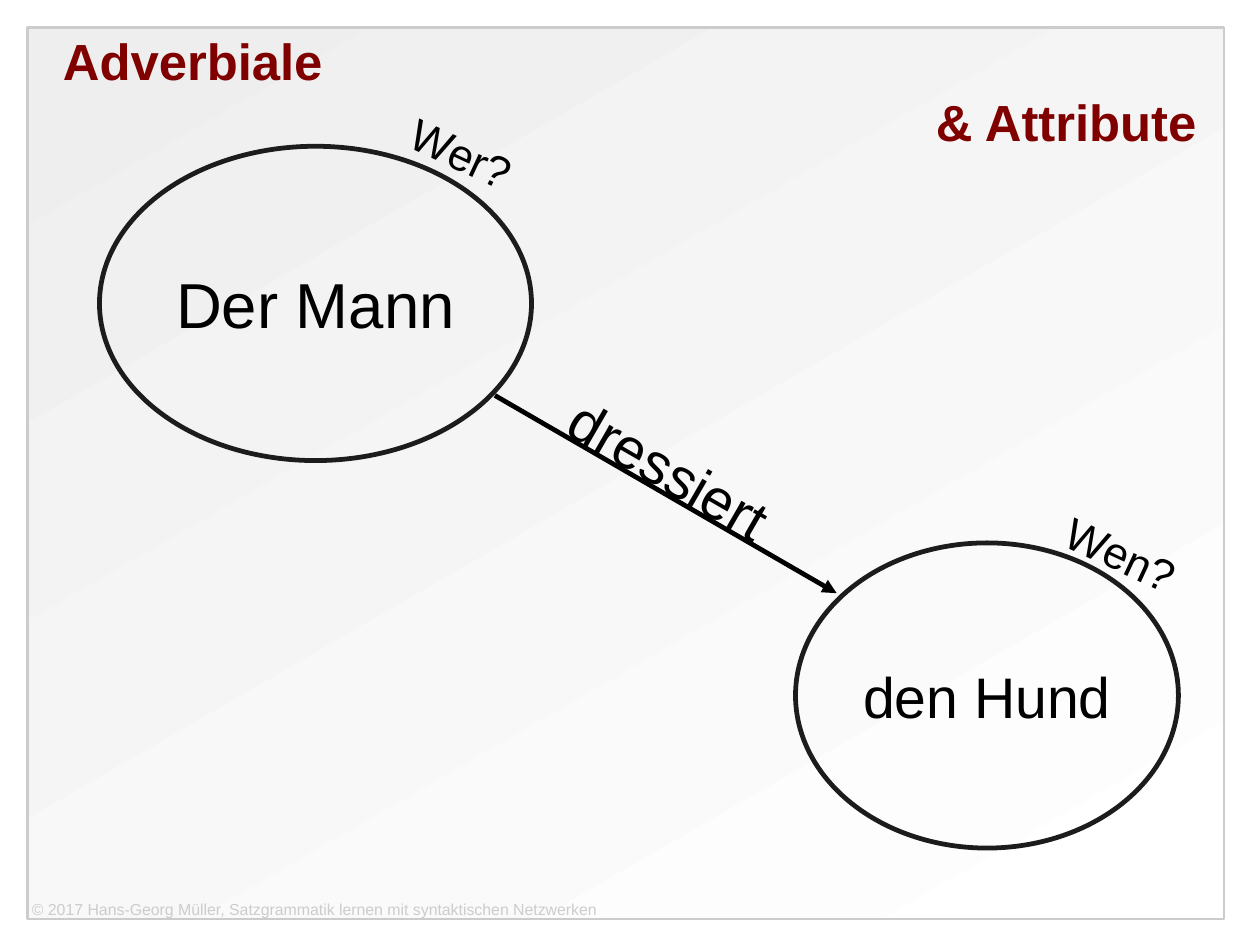
"""Build the slide on adverbials and attributes in a syntactic network."""
from lxml import etree
from pptx import Presentation
from pptx.dml.color import RGBColor
from pptx.enum.shapes import MSO_CONNECTOR, MSO_SHAPE
from pptx.enum.text import MSO_ANCHOR, PP_ALIGN
from pptx.oxml.ns import qn
from pptx.util import Inches, Pt

LEFT, CENTER, RIGHT = PP_ALIGN.LEFT, PP_ALIGN.CENTER, PP_ALIGN.RIGHT
TOP, MIDDLE = MSO_ANCHOR.TOP, MSO_ANCHOR.MIDDLE
RECTANGLE, OVAL = MSO_SHAPE.RECTANGLE, MSO_SHAPE.OVAL
STRAIGHT = MSO_CONNECTOR.STRAIGHT
CM_PER_INCH = 2.54
FONT = "Arial"
COLORS = {
    "title": "800000",
    "text": "000000",
    "node": "1C1C1C",
    "muted": "CCCCCC",
    "panel_start": "EEEEEE",
    "panel_end": "FFFFFF",
}


def color(name):
    """Return the named colour."""
    return RGBColor.from_string(COLORS[name])


def set_line(line, name, width):
    """Set the colour and the width of a line."""
    line.color.rgb = color(name)
    line.width = Pt(width)


def write(shape, lines, size, name="text", bold=False, anchor=TOP, inset=0, wrap=True):
    """Fill a shape with aligned paragraphs."""
    frame = shape.text_frame
    frame_format = {
        "word_wrap": wrap,
        "vertical_anchor": anchor,
        "margin_left": Inches(inset),
        "margin_right": Inches(inset),
        "margin_top": Inches(inset / 2),
        "margin_bottom": Inches(inset / 2),
    }
    for key, value in frame_format.items():
        setattr(frame, key, value)
    for index, (text, alignment) in enumerate(lines):
        para = frame.add_paragraph() if index else frame.paragraphs[0]
        para.alignment = alignment
        span = para.add_run()
        span.text = text
        span.font.color.rgb = color(name)
        for key, value in {"name": FONT, "size": Pt(size), "bold": bold}.items():
            setattr(span.font, key, value)


def add_panel(page, bounds):
    """Add the framed background with its gradient."""
    panel = page.shapes.add_shape(RECTANGLE, *map(Inches, bounds))
    panel.shadow.inherit = False
    panel.fill.gradient()
    panel.fill.gradient_angle = 300
    for stop, position, name in zip(
        panel.fill.gradient_stops, (0, 1), ("panel_start", "panel_end")
    ):
        stop.position = position
        stop.color.rgb = color(name)
    set_line(panel.line, "muted", 1.5)


def add_label(page, bounds, lines, size, rotation=0, **text_format):
    """Add a text box, turned if wanted."""
    label = page.shapes.add_textbox(*map(Inches, bounds))
    label.rotation = rotation
    write(label, lines, size, **text_format)


def add_node(page, bounds, text, size):
    """Add an outlined ellipse with centred text."""
    node = page.shapes.add_shape(OVAL, *map(Inches, bounds))
    node.shadow.inherit = False
    node.fill.background()
    set_line(node.line, "node", 3)
    write(node, [(text, CENTER)], size, anchor=MIDDLE, inset=0.12, wrap=False)


def add_arrow(page, start, end):
    """Add a straight arrow between two points."""
    arrow = page.shapes.add_connector(STRAIGHT, *map(Inches, start + end))
    set_line(arrow.line, "text", 3)
    etree.SubElement(arrow.line._get_or_add_ln(), qn("a:tailEnd"), type="triangle")
    etree.SubElement(arrow._element.spPr, qn("a:effectLst"))


def main():
    """Build and save the deck."""
    deck = Presentation()
    deck.slide_width = Inches(28 / CM_PER_INCH)
    deck.slide_height = Inches(21 / CM_PER_INCH)
    page = deck.slides.add_slide(deck.slide_layouts[6])

    add_panel(page, (0.24, 0.24, 10.47, 7.8))
    credit = "© 2017 Hans-Georg Müller, Satzgrammatik lernen mit syntaktischen Netzwerken"
    add_label(page, (0.28, 7.87, 10.43, 0.16), [(credit, LEFT)], 10, name="muted")
    title = [("Adverbiale", LEFT), ("& Attribute", RIGHT)]
    add_label(page, (0.55, 0.29, 9.92, 1), title, 32,
              name="title", bold=True, anchor=MIDDLE)

    add_arrow(page, (4.33, 3.46), (7.32, 5.19))
    add_label(page, (4.77, 3.8, 2.2, 0.58), [("dressiert", CENTER)], 36, rotation=30)

    for bounds, text, size, question, question_bounds in (
        ((0.87, 1.28, 3.78, 2.75), "Der Mann", 40, "Wer?", (3.48, 1.08, 1.23, 0.56)),
        ((6.96, 4.75, 3.35, 2.67), "den Hund", 36, "Wen?", (9.21, 4.6, 1.38, 0.53)),
    ):
        add_node(page, bounds, text, size)
        add_label(page, question_bounds, [(question, LEFT)], 28, rotation=25, inset=0.1)

    deck.save("out.pptx")


if __name__ == "__main__":
    main()
